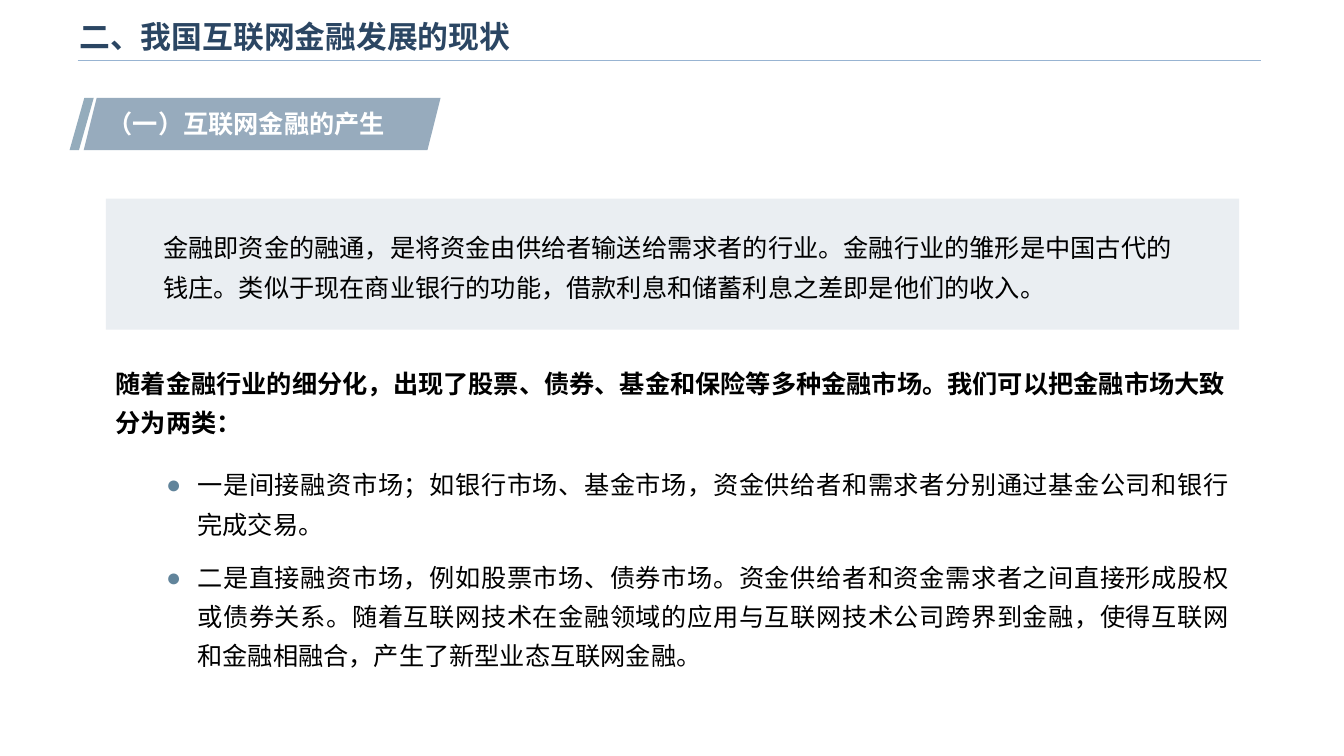
from lxml import etree
from pptx import Presentation
from pptx.dml.color import RGBColor
from pptx.enum.shapes import MSO_CONNECTOR as Connector, MSO_SHAPE as Shape
from pptx.enum.text import MSO_ANCHOR as Anchor, PP_ALIGN as Align
from pptx.oxml.ns import qn
from pptx.util import Inches, Pt

COLORS = {
    "title": "2B4663", "rule": "98B4D2", "stripe": "94ACBC", "banner": "97ABBD",
    "panel": "EAEEF2", "bullet": "61849B", "white": "FFFFFF", "black": "000000",
}
CJK_FONT = "Noto Sans CJK SC"

TITLE = "二、我国互联网金融发展的现状"
SECTION = "（一）互联网金融的产生"
DEFINITION = (
    "金融即资金的融通，是将资金由供给者输送给需求者的行业。金融行业的雏形是中国古代的"
    "钱庄。类似于现在商业银行的功能，借款利息和储蓄利息之差即是他们的收入。"
)
LEAD_IN = (
    "随着金融行业的细分化，出现了股票、债券、基金和保险等多种金融市场。"
    "我们可以把金融市场大致分为两类："
)
MARKETS = [
    "一是间接融资市场；如银行市场、基金市场，资金供给者和需求者分别通过基金公司和银行完成交易。",
    "二是直接融资市场，例如股票市场、债券市场。资金供给者和资金需求者之间直接形成股权或债券关系。"
    "随着互联网技术在金融领域的应用与互联网技术公司跨界到金融，使得互联网和金融相融合，"
    "产生了新型业态互联网金融。",
]


def color(name):
    return RGBColor.from_string(COLORS[name])


def add_filled(shapes, kind, left, top, width, height, fill, slant=None):
    shape = shapes.add_shape(kind, Inches(left), Inches(top), Inches(width), Inches(height))
    shape.shadow.inherit = False
    shape.fill.solid()
    shape.fill.fore_color.rgb = color(fill)
    shape.line.fill.background()
    if slant is not None:
        shape.adjustments[0] = slant


def add_text(slide, left, top, width, height, texts, size=18, font=CJK_FONT,
             ink="black", bold=False, spacing=None):
    box = slide.shapes.add_textbox(Inches(left), Inches(top), Inches(width), Inches(height))
    frame = box.text_frame
    frame.word_wrap = True
    frame.text = "\n".join(texts)
    for paragraph in frame.paragraphs:
        paragraph.line_spacing = spacing
        for run in paragraph.runs:
            run.font.size = Pt(size)
            run.font.name = font
            run.font.bold = bold
            run.font.color.rgb = color(ink)
            east_asian = etree.Element(qn("a:ea"), typeface=CJK_FONT)
            run.font._element.find(qn("a:latin")).addnext(east_asian)
    return frame


def add_bullet(paragraph, indent, hanging):
    properties = paragraph._p.get_or_add_pPr()
    properties.set("marL", str(Inches(indent)))
    properties.set("indent", str(-Inches(hanging)))
    bullet_color = etree.SubElement(properties, qn("a:buClr"))
    etree.SubElement(bullet_color, qn("a:srgbClr"), val=COLORS["bullet"])
    etree.SubElement(properties, qn("a:buFont"), typeface="Arial")
    etree.SubElement(properties, qn("a:buChar"), char="●")


def add_heading(slide, left, top, width, height):
    # Title over a thin rule
    frame = add_text(slide, left, top, width, height, [TITLE],
                     size=22, font="Arial", ink="title", bold=True)
    frame.vertical_anchor = Anchor.MIDDLE
    rule_left, rule_top = left + 0.08, top + 0.51
    rule = slide.shapes.add_connector(
        Connector.STRAIGHT, Inches(rule_left), Inches(rule_top),
        Inches(rule_left + 11.74), Inches(rule_top))
    rule.line.color.rgb = color("rule")
    rule.line.width = Pt(1)
    etree.SubElement(rule._element.spPr, qn("a:effectLst"))


def add_section_banner(slide, left, top, width, height):
    # Slanted stripe and banner, grouped
    group = slide.shapes.add_group_shape()
    add_filled(group.shapes, Shape.PARALLELOGRAM, left, top, 0.24, height, "stripe", 0.613)
    add_filled(group.shapes, Shape.PARALLELOGRAM, left + 0.14, top, width - 0.14, height,
               "banner", 0.25)
    add_text(slide, left + 0.28, top + 0.06, width - 0.34, 0.4, [SECTION],
             ink="white", bold=True)


def add_definition_panel(slide, left, top, width, height):
    # Tinted panel with inset text
    add_filled(slide.shapes, Shape.RECTANGLE, left, top, width, height, "panel")
    add_text(slide, left + 0.47, top + 0.2, width - 0.95, height - 0.41,
             [DEFINITION], spacing=1.3)


def add_market_list(slide, left, top, width, height):
    # Bold lead-in, then the bulleted markets
    list_offset = 1.01
    add_text(slide, left, top, width, 0.89, [LEAD_IN], bold=True, spacing=1.3)
    frame = add_text(slide, left, top + list_offset, width, height - list_offset,
                     MARKETS, spacing=1.3)
    for paragraph in frame.paragraphs:
        paragraph.level = 1
        paragraph.alignment = Align.JUSTIFY
        paragraph.space_after = Pt(10)
        add_bullet(paragraph, 0.81, 0.31)


def main():
    presentation = Presentation()
    presentation.slide_width = Inches(13.33)
    presentation.slide_height = Inches(7.5)
    slide = presentation.slides.add_slide(presentation.slide_layouts[6])
    add_heading(slide, 0.69, 0.09, 10.71, 0.53)
    add_section_banner(slide, 0.69, 0.97, 3.68, 0.52)
    add_definition_panel(slide, 1.05, 1.97, 11.24, 1.3)
    add_market_list(slide, 1.05, 3.51, 11.24, 3.22)
    presentation.save("out.pptx")


if __name__ == "__main__":
    main()
